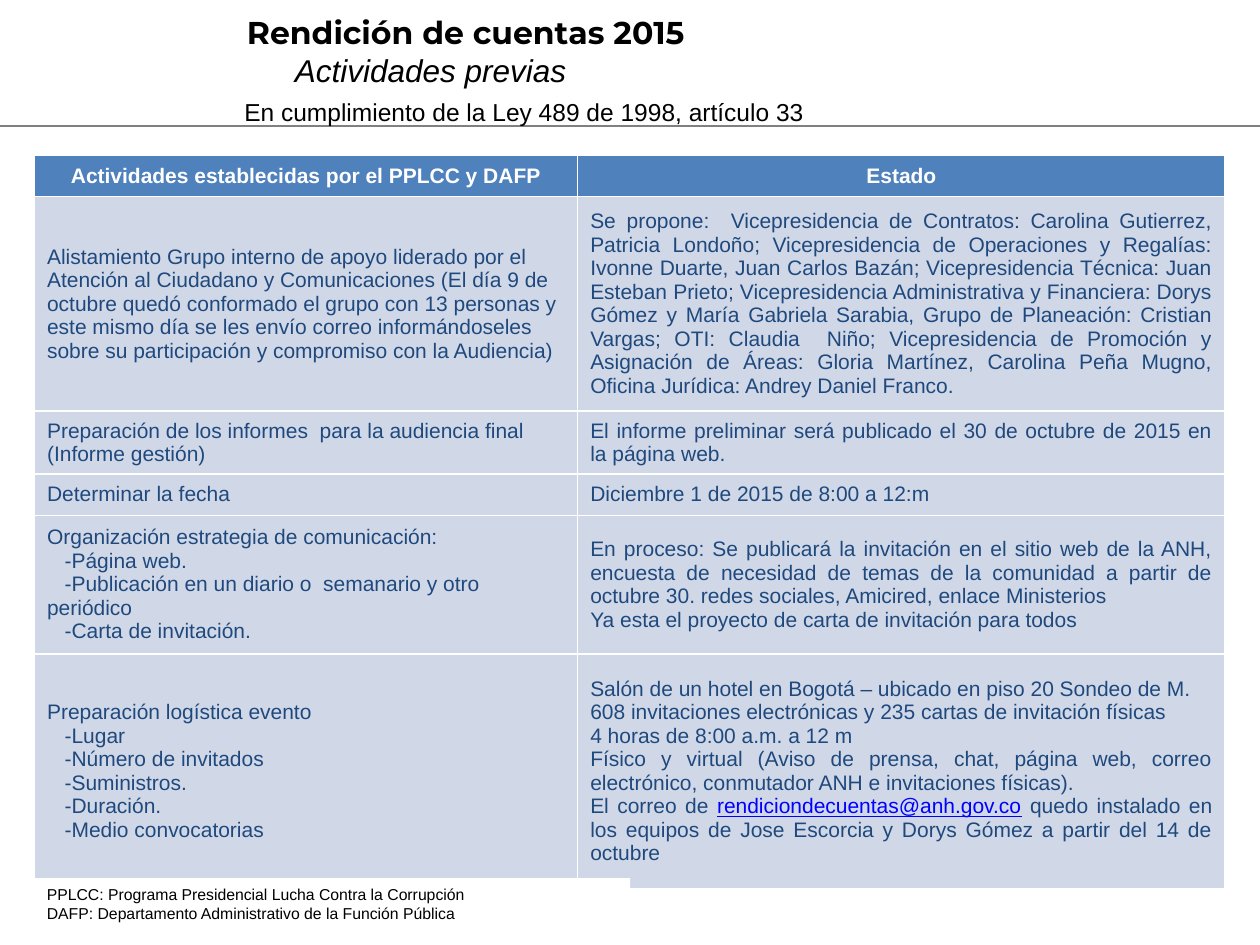
from dataclasses import dataclass

from lxml import etree
from pptx import Presentation
from pptx.dml.color import RGBColor
from pptx.enum.shapes import MSO_CONNECTOR, MSO_SHAPE
from pptx.enum.text import MSO_ANCHOR, PP_ALIGN
from pptx.oxml.ns import qn
from pptx.util import Pt

LEFT, CENTER, JUSTIFY = PP_ALIGN.LEFT, PP_ALIGN.CENTER, PP_ALIGN.JUSTIFY
TOP, MIDDLE = MSO_ANCHOR.TOP, MSO_ANCHOR.MIDDLE
RECTANGLE, STRAIGHT = MSO_SHAPE.RECTANGLE, MSO_CONNECTOR.STRAIGHT


@dataclass(frozen=True)
class Theme:
    """Colours, fonts and type sizes of the slide."""
    black: str = "000000"
    white: str = "FFFFFF"
    rule: str = "808080"
    header: str = "4F81BD"
    body: str = "D0D8E8"
    ink: str = "1F497D"
    link: str = "0000FF"
    font: str = "Arial"
    title_font: str = "Montserrat"
    title_size: int = 18
    subtitle_size: int = 14
    table_size: int = 12
    note_size: int = 9


THEME = Theme()
EMAIL = "rendiciondecuentas@anh.gov.co"
ITEM_INDENT = 10
TITLE_INDENT = 27.4
COLUMN_WIDTHS = (310.4, 370)
ROW_HEIGHTS = (23.6, 122, 36, 23.6, 79, 134)
HEADERS = ("Actividades establecidas por el PPLCC y DAFP", "Estado")
ROWS = (
    (
        ("Alistamiento Grupo interno de apoyo liderado por el Atención al Ciudadano y "
         "Comunicaciones (El día 9 de octubre quedó conformado el grupo con 13 personas y "
         "este mismo día se les envío correo informándoseles sobre su participación y "
         "compromiso con la Audiencia)",),
        ("Se propone:  Vicepresidencia de Contratos: Carolina Gutierrez, Patricia Londoño; "
         "Vicepresidencia de Operaciones y Regalías: Ivonne Duarte, Juan Carlos Bazán; "
         "Vicepresidencia Técnica: Juan Esteban Prieto; Vicepresidencia Administrativa y "
         "Financiera: Dorys Gómez y María Gabriela Sarabia, Grupo de Planeación: Cristian "
         "Vargas; OTI: Claudia  Niño; Vicepresidencia de Promoción y Asignación de Áreas: "
         "Gloria Martínez, Carolina Peña Mugno, Oficina Jurídica: Andrey Daniel Franco.",),
    ),
    (
        ("Preparación de los informes  para la audiencia final (Informe gestión)",),
        ("El informe preliminar será publicado el 30 de octubre de 2015 en la página web.",),
    ),
    (("Determinar la fecha",), ("Diciembre 1 de 2015 de 8:00 a 12:m",)),
    (
        ("Organización estrategia de comunicación:", "-Página web.",
         "-Publicación en un diario o  semanario y otro periódico", "-Carta de invitación."),
        ("En proceso: Se publicará la invitación en el sitio web de la ANH, encuesta de "
         "necesidad de temas de la comunidad a partir de octubre 30. redes sociales, "
         "Amicired, enlace Ministerios",
         "Ya esta el proyecto de carta de invitación para todos"),
    ),
    (
        ("Preparación logística evento", "-Lugar", "-Número de invitados", "-Suministros.",
         "-Duración.", "-Medio convocatorias"),
        ("Salón de un hotel en Bogotá – ubicado en piso 20 Sondeo de M.",
         "608 invitaciones electrónicas y 235 cartas de invitación físicas",
         "4 horas de 8:00 a.m. a 12 m",
         "Físico y virtual (Aviso de prensa, chat, página web, correo electrónico, "
         "conmutador ANH e invitaciones físicas).",
         f"El correo de {EMAIL} quedo instalado en los equipos de Jose Escorcia y Dorys "
         "Gómez a partir del 14 de octubre"),
    ),
)


def color(value):
    """Turn a hex string into a colour."""
    return RGBColor.from_string(value)


def add_run(paragraph, text, size, ink=THEME.black, font=THEME.font, **styles):
    """Add one styled run to a paragraph."""
    run = paragraph.add_run()
    run.text = text
    run.font.size = Pt(size)
    run.font.name = font
    run.font.color.rgb = color(ink)
    for name, value in styles.items():
        setattr(run.font, name, value)


def add_paragraph(frame, index, alignment=LEFT, margin=0, indent=0):
    """Return the paragraph at an index, with its alignment and indents."""
    paragraph = frame.add_paragraph() if index else frame.paragraphs[0]
    paragraph.alignment = alignment
    properties = paragraph._p.get_or_add_pPr()
    properties.set("marL", str(Pt(margin)))
    properties.set("indent", str(Pt(indent)))
    return paragraph


def add_text_box(slide, box, anchor=TOP):
    """Add a wrapping text box and return its frame."""
    frame = slide.shapes.add_textbox(*map(Pt, box)).text_frame
    frame.word_wrap = True
    frame.vertical_anchor = anchor
    return frame


def add_rule(slide, box):
    """Draw the horizontal rule along the top of a box."""
    left, top, width, _ = box
    line = slide.shapes.add_connector(STRAIGHT, Pt(left), Pt(top), Pt(left + width), Pt(top))
    line.line.color.rgb = color(THEME.rule)
    line.line.width = Pt(0.75)
    etree.SubElement(line._element.spPr, qn("a:effectLst"))


def add_title(slide, box):
    """Place the title with its italic second line."""
    frame = add_text_box(slide, box, MIDDLE)
    title = add_paragraph(frame, 0, LEFT, TITLE_INDENT, -TITLE_INDENT)
    add_run(title, "Rendición de cuentas 2015", THEME.title_size,
            font=THEME.title_font, bold=True)
    add_run(add_paragraph(frame, 1, LEFT, TITLE_INDENT), "Actividades previas",
            THEME.title_size, italic=True)


def add_subtitle(slide, box):
    """Place the line that names the law."""
    paragraph = add_paragraph(add_text_box(slide, box), 0)
    add_run(paragraph, "En cumplimiento de la Ley 489 de 1998, artículo 33",
            THEME.subtitle_size)


def style_cell(cell, fill):
    """Give a cell white borders, a fill and a middle anchor."""
    properties = cell._tc.get_or_add_tcPr()
    for side in ("a:lnL", "a:lnR", "a:lnT", "a:lnB"):
        border = etree.SubElement(properties, qn(side), w=str(Pt(1)))
        solid = etree.SubElement(border, qn("a:solidFill"))
        etree.SubElement(solid, qn("a:srgbClr"), val=THEME.white)
    cell.fill.solid()
    cell.fill.fore_color.rgb = color(fill)
    cell.vertical_anchor = MIDDLE


def fill_body_cell(cell, lines, alignment):
    """Write the lines of a body cell, indenting items and underlining the address."""
    style_cell(cell, THEME.body)
    for index, text in enumerate(lines):
        indent = ITEM_INDENT if text.startswith("-") else 0
        paragraph = add_paragraph(cell.text_frame, index, alignment, indent=indent)
        before, address, after = text.partition(EMAIL)
        add_run(paragraph, before, THEME.table_size, THEME.ink)
        if address:
            add_run(paragraph, address, THEME.table_size, THEME.link, underline=True)
            add_run(paragraph, after, THEME.table_size, THEME.ink)


def add_activity_table(slide, box):
    """Place the table of activities and their state."""
    table = slide.shapes.add_table(len(ROW_HEIGHTS), len(COLUMN_WIDTHS), *map(Pt, box)).table
    for column, width in zip(table.columns, COLUMN_WIDTHS):
        column.width = Pt(width)
    for row, height in zip(table.rows, ROW_HEIGHTS):
        row.height = Pt(height)
    for index, text in enumerate(HEADERS):
        cell = table.cell(0, index)
        style_cell(cell, THEME.header)
        add_run(add_paragraph(cell.text_frame, 0, CENTER), text, THEME.table_size,
                THEME.white, bold=True)
    for row_index, (activity, state) in enumerate(ROWS, 1):
        fill_body_cell(table.cell(row_index, 0), activity, LEFT)
        fill_body_cell(table.cell(row_index, 1), state, JUSTIFY)


def add_notes_panel(slide, box):
    """Place the white panel that explains the abbreviations."""
    shape = slide.shapes.add_shape(RECTANGLE, *map(Pt, box))
    shape.shadow.inherit = False
    shape.fill.solid()
    shape.fill.fore_color.rgb = color(THEME.white)
    shape.line.fill.background()
    frame = shape.text_frame
    frame.word_wrap = True
    frame.vertical_anchor = TOP
    for index, text in enumerate((
            "PPLCC: Programa Presidencial Lucha Contra la Corrupción",
            "DAFP: Departamento Administrativo de la Función Pública")):
        add_run(add_paragraph(frame, index), text, THEME.note_size)


def main():
    """Build the slide and save it."""
    presentation = Presentation()
    presentation.slide_width, presentation.slide_height = Pt(720), Pt(540)
    slide = presentation.slides.add_slide(presentation.slide_layouts[6])
    add_rule(slide, (0, 72, 720, 0))
    add_title(slide, (134, 3.6, 589, 51))
    add_activity_table(slide, (19.7, 88.8, sum(COLUMN_WIDTHS), sum(ROW_HEIGHTS)))
    add_subtitle(slide, (132.5, 51.8, 409, 24.5))
    add_notes_panel(slide, (19.7, 501.8, 340.5, 28.8))
    presentation.save("out.pptx")


if __name__ == "__main__":
    main()
